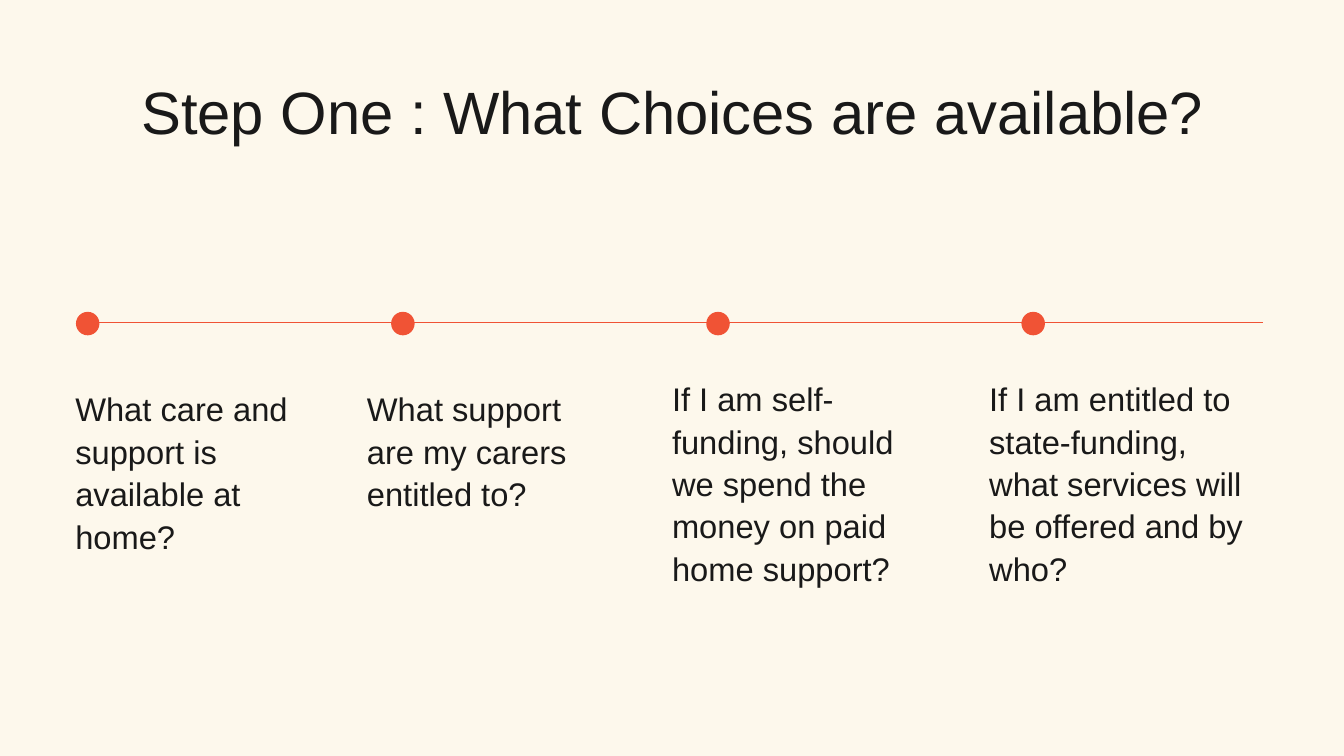
from lxml.etree import SubElement as Sub
from pptx import Presentation as Deck
from pptx.dml.color import RGBColor as Rgb
from pptx.enum.shapes import MSO_CONNECTOR as Link, MSO_SHAPE as Form
from pptx.enum.text import MSO_ANCHOR as Anchor, MSO_AUTO_SIZE as Fit, PP_ALIGN as Align
from pptx.oxml.ns import qn
from pptx.util import Inches, Pt

HUES = {"back": "FDF8EC", "mark": "F05335", "ink": "191919"}
STEPS = [
    (1.12, 5.74, 3.29, 2.48, "What care and support is available at home?"),
    (5.46, 5.74, 3.13, 2.48, "What support are my carers entitled to?"),
    (10, 5.59, 3.68, 3.73, "If I am self-funding, should we spend the money on paid home support?"),
    (14.72, 5.59, 4.07, 3.11,
     "If I am entitled to state-funding, what services will be offered and by who?"),
]


class Style:
    """Holds the look and the current slide, and draws each kind of element."""

    def __init__(self, slide):
        self.slide = slide
        self.shapes = slide.shapes
        self.paint(slide.background.fill, "back")

    def hue(self, name):
        return Rgb.from_string(HUES[name])

    def paint(self, fill, name):
        fill.solid()
        fill.fore_color.rgb = self.hue(name)

    def apply(self, item, values):
        for name, value in values.items():
            setattr(item, name, value)

    def letter(self, shape, text, size, pitch, align):
        frame = shape.text_frame
        self.apply(frame, {
            "word_wrap": True, "auto_size": Fit.NONE, "vertical_anchor": Anchor.TOP,
            "margin_left": 0, "margin_top": 0, "margin_right": 0, "margin_bottom": 0,
        })
        frame.text = text
        para = frame.paragraphs[0]
        self.apply(para, {"alignment": align, "line_spacing": Pt(pitch), "space_before": Pt(0)})
        self.apply(para.font, {"name": "Arial", "size": Pt(size)})
        para.font.color.rgb = self.hue("ink")

    def title(self, left, top, width, height, text):
        shape = self.shapes.title
        self.apply(shape, {
            "left": Inches(left), "top": Inches(top),
            "width": Inches(width), "height": Inches(height),
        })
        self.letter(shape, text, 64, 76.8, Align.CENTER)

    def text(self, left, top, width, height, text):
        box = self.shapes.add_textbox(*map(Inches, (left, top, width, height)))
        self.letter(box, text, 35, 45.5, Align.LEFT)

    def line(self, left, right, top):
        line = self.shapes.add_connector(Link.STRAIGHT, *map(Inches, (left, top, right, top)))
        line.line.color.rgb = self.hue("mark")
        line.line.width = Pt(1.5)
        Sub(line._element.spPr, qn("a:effectLst"))

    def dot(self, left, top, size):
        dot = self.shapes.add_shape(Form.OVAL, *map(Inches, (left, top, size, size)))
        dot.shadow.inherit = False
        self.paint(dot.fill, "mark")
        dot.line.fill.background()


def main():
    deck = Deck()
    deck.slide_width, deck.slide_height = Inches(20), Inches(11.25)
    style = Style(deck.slides.add_slide(deck.slide_layouts[5]))
    style.title(0.55, 1.12, 18.91, 1.06, "Step One : What Choices are available?")
    style.line(1.21, 18.79, 4.8)
    for rank, step in enumerate(STEPS):
        style.dot(1.13 + 4.69 * rank, 4.64, 0.35)
        style.text(*step)
    deck.save("out.pptx")


if __name__ == "__main__":
    main()
